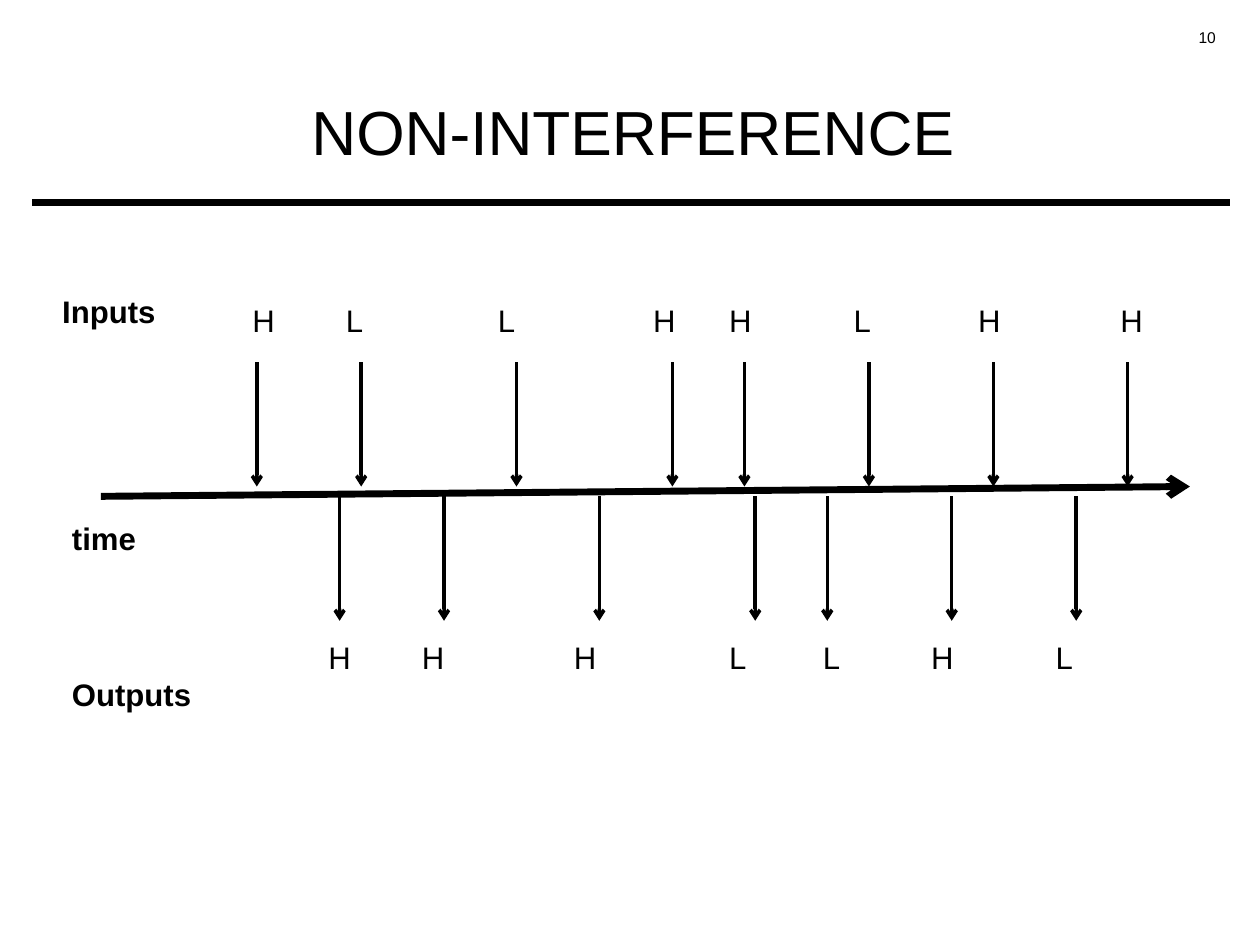
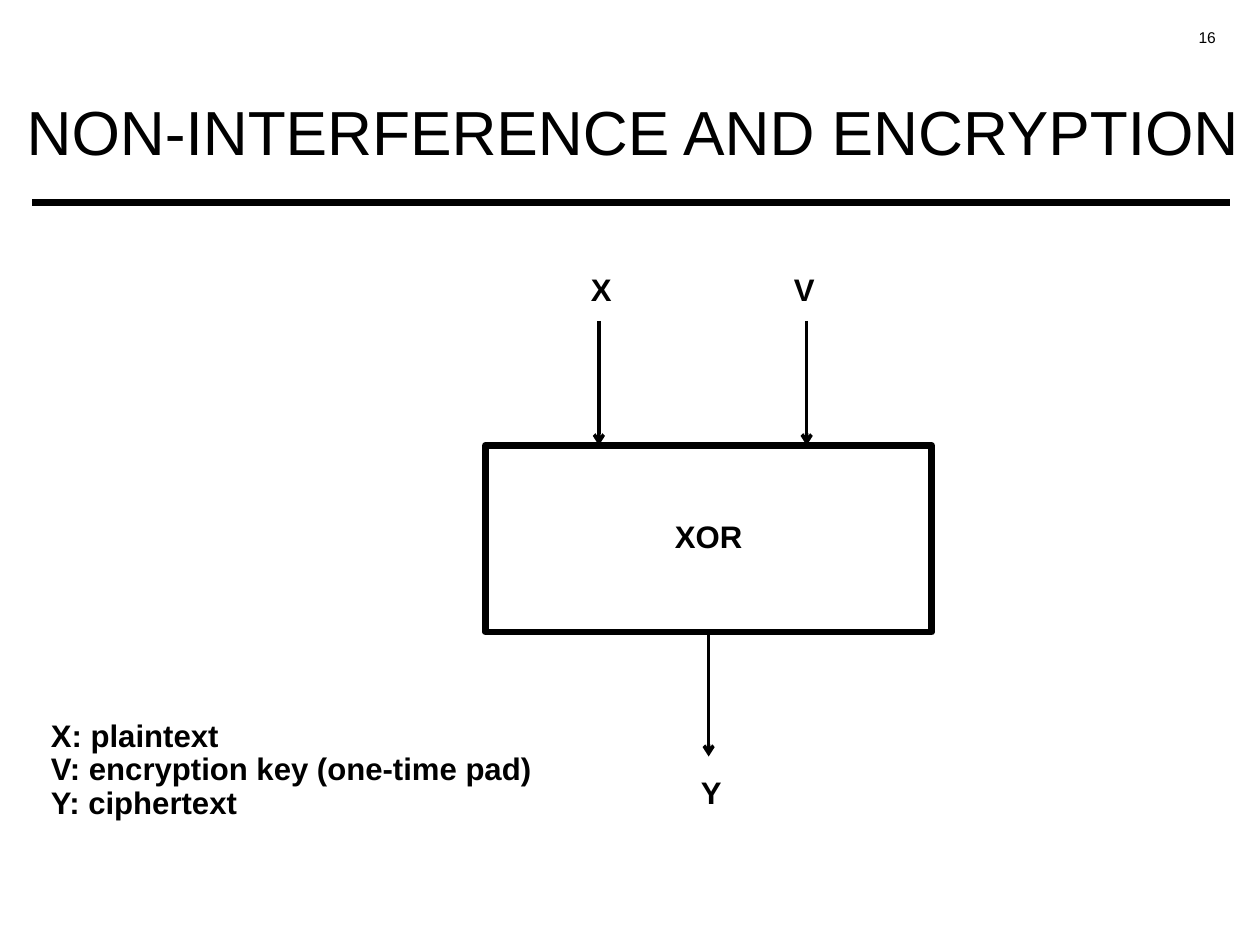
from lxml import etree
from pptx import Presentation
from pptx.dml.color import RGBColor
from pptx.enum import shapes as es, text as et
from pptx.oxml.ns import qn
from pptx.util import Cm, Pt

INK = "000000"
THIN, THICK = 2, 4
LABEL = {"size": Pt(18), "bold": False}
BOLD = {"size": Pt(18), "bold": True}
TITLE = {"size": Pt(36), "bold": False}
PAGE = {"size": Pt(9), "bold": False}
TIGHT = {"margin_left": Cm(0.18), "margin_right": Cm(0.18),
         "margin_top": Cm(0.08), "margin_bottom": Cm(0.08)}
LEFT, MID, RIGHT = et.PP_ALIGN.LEFT, et.PP_ALIGN.CENTER, et.PP_ALIGN.RIGHT
TOP = et.MSO_ANCHOR.TOP

INPUTS = [("H", 5.24, 4.9), ("L", 7.37, 6.81), ("L", 10.54, 9.91),
          ("H", 13.72, 13.08), ("H", 15.19, 14.63), ("L", 17.73, 17.17),
          ("H", 20.27, 19.71), ("H", 23.01, 22.61)]
OUTPUTS = [("H", 6.45), ("H", 8.36), ("H", 11.46), ("L", 14.63),
           ("L", 16.54), ("H", 18.75), ("L", 21.29)]
DELAY = 1.69


def tint(obj, code):
    obj.rgb = RGBColor.from_string(code)


def assign(obj, vals):
    for key, val in vals.items():
        setattr(obj, key, val)


def write(shape, words, font, align=LEFT, space=0.9, **frame):
    tf = shape.text_frame
    tf.text = words
    assign(tf, {"word_wrap": True, "auto_size": et.MSO_AUTO_SIZE.NONE,
                "vertical_anchor": TOP, **frame})
    for par in tf.paragraphs:
        assign(par, {"alignment": align, "line_spacing": space})
        for run in par.runs:
            assign(run.font, {"name": "Arial", **font})
            tint(run.font.color, INK)


def label(slide, words, x, y, w, font=LABEL, h=0.94, **opts):
    box = slide.shapes.add_textbox(Cm(x), Cm(y), Cm(w), Cm(h))
    write(box, words, font, **opts)


def stroke(slide, x1, y1, x2, y2, width, arrow=True):
    line = slide.shapes.add_connector(
        es.MSO_CONNECTOR.STRAIGHT, Cm(x1), Cm(y1), Cm(x2), Cm(y2))
    line.line.width = Pt(width)
    tint(line.line.color, INK)
    props = line._element.spPr
    if arrow:
        etree.SubElement(props.find(qn("a:ln")), qn("a:tailEnd"), type="arrow")
    etree.SubElement(props, qn("a:effectLst"))
    return line


def block(slide, words, x, y, w, h):
    box = slide.shapes.add_shape(
        es.MSO_SHAPE.RECTANGLE, Cm(x), Cm(y), Cm(w), Cm(h))
    box.shadow.inherit = False
    box.fill.background()
    box.line.width = Pt(THICK)
    tint(box.line.color, INK)
    write(box, words, BOLD, MID, vertical_anchor=et.MSO_ANCHOR.MIDDLE)
    return box


def start(prs, title, page):
    slide = prs.slides.add_slide(prs.slide_layouts[5])
    label(slide, page, 22.48, 0.38, 2.51, PAGE, 0.64,
          align=RIGHT, space=1.3, **TIGHT)
    stroke(slide, 0.66, 4.14, 25.1, 4.14, THICK, arrow=False)
    head = slide.shapes.title
    assign(head, {"left": Cm(0.2), "top": Cm(2.06),
                  "width": Cm(25.43), "height": Cm(1.45)})
    write(head, title, TITLE, MID, 0.85, **{**TIGHT, "word_wrap": False})
    return slide


def timeline(prs):
    slide = start(prs, "NON-INTERFERENCE", "10")
    stroke(slide, 2.06, 10.13, 24.28, 9.93, THICK)
    for words, x, y in [("Inputs", 1.02, 5.92), ("time", 1.22, 10.57),
                        ("Outputs", 1.22, 13.74)]:
        label(slide, words, x, y, 3.4, BOLD)
    for level, x, left in INPUTS:
        label(slide, level, left, 6.12, 0.97)
        stroke(slide, x, 7.39, x, 9.93, THIN)
    for (level, left), (_, x, _) in zip(OUTPUTS, INPUTS):
        label(slide, level, left, 13, 0.97)
        stroke(slide, x + DELAY, 10.13, x + DELAY, 12.67, THIN)


def cipher(prs):
    slide = start(prs, "NON-INTERFERENCE AND ENCRYPTION", "16")
    gate = block(slide, "XOR", 9.91, 9.09, 9.1, 3.81)
    for x in (12.22, 16.46):
        stroke(slide, x, 6.55, x, 9.09, THIN)
    out = stroke(slide, 14.46, 12.9, 14.46, 15.44, THIN)
    out.begin_connect(gate, 2)
    for name, x, y in [("X", 11.81, 5.49), ("V", 15.95, 5.49),
                       ("Y", 14.05, 15.75)]:
        label(slide, name, x, y, 1.1, BOLD)
    label(slide, "X: plaintext\nV: encryption key (one-time pad)\n"
          "Y: ciphertext", 0.79, 14.58, 10.8, BOLD, 2.34)


def main():
    prs = Presentation()
    prs.slide_width = Cm(25.71)
    prs.slide_height = Cm(19.43)
    prs.element.sldSz.set("type", "custom")
    timeline(prs)
    cipher(prs)
    prs.save("out.pptx")


if __name__ == "__main__":
    main()
